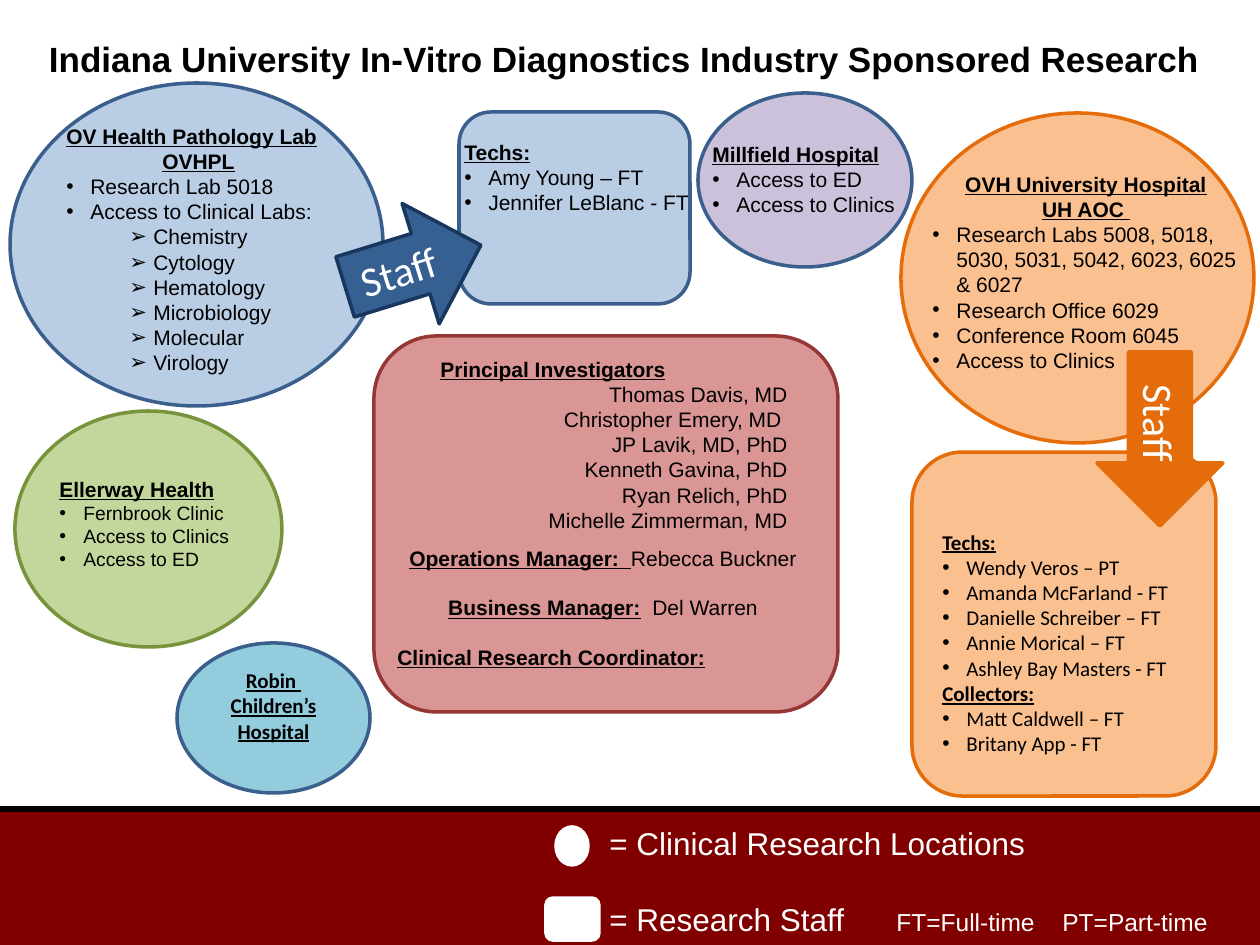
from lxml.etree import SubElement
from pptx import Presentation
from pptx.dml.color import RGBColor
from pptx.enum.shapes import MSO_CONNECTOR, MSO_SHAPE as SHAPE
from pptx.enum.text import MSO_ANCHOR as ANCHOR, PP_ALIGN as ALIGN
from pptx.oxml.ns import qn
from pptx.util import Emu, Pt

SCALE = 914400 / 126
COLORS = {
    "black": "000000", "white": "FFFFFF", "maroon": "800000",
    "blue": "B9CDE5", "blue line": "3A5F8C", "arrow": "376092", "arrow line": "17375E",
    "orange": "FAC090", "orange line": "E46C0A", "green": "C3D69B", "green line": "77933C",
    "red": "D99694", "red line": "953735", "purple": "CCC1DA", "teal": "93CDDD",
}
HEAD = dict(bold=True, underline=True)
CENTER_HEAD = dict(HEAD, align=ALIGN.CENTER)
ITEM = dict(bullet="•", left=24)
SUBITEM = dict(bullet="➢", left=87, level=1)


def px(n):
    return Emu(round(n * SCALE))


def rgb(name):
    return RGBColor.from_string(COLORS[name])


def place(box, dx, dy, w, h):
    """Box of size w by h, offset from the corner of another box."""
    return box[0] + dx, box[1] + dy, w, h


def write(tf, text, size=12, font="Arial", color="black", bold=False, underline=False,
          align=ALIGN.LEFT, bullet=None, left=0, level=0, before=0, plain="", tabs=()):
    """Append a paragraph; plain is a second run without bold and underline."""
    p = tf.paragraphs[0] if not tf.text else tf.add_paragraph()
    p.alignment, p.level = align, level
    if before:
        p.space_before = Pt(before)
    pPr = p._p.get_or_add_pPr()
    if left:
        pPr.set("marL", str(px(left)))
    if bullet:
        pPr.set("indent", str(-px(24)))
        SubElement(pPr, qn("a:buFont"), typeface="Arial")
        SubElement(pPr, qn("a:buChar"), char=bullet)
    if tabs:
        tab_list = SubElement(pPr, qn("a:tabLst"))
        for pos in tabs:
            SubElement(tab_list, qn("a:tab"), pos=str(px(pos)), algn="l")
    for part, strong, under in ((text, bold, underline), (plain, False, False)):
        if part:
            r = p.add_run()
            r.text = part
            r.font.size, r.font.name = Pt(size), font
            r.font.bold, r.font.underline = strong, under
            r.font.color.rgb = rgb(color)
    return p


def add_shape(s, kind, box, fill, line):
    sp = s.shapes.add_shape(kind, *map(px, box))
    sp.shadow.inherit = False
    sp.fill.solid()
    sp.fill.fore_color.rgb = rgb(fill)
    sp.line.color.rgb = rgb(line)
    sp.line.width = Pt(2)
    return sp


def add_text(s, box):
    tf = s.shapes.add_textbox(*map(px, box)).text_frame
    tf.word_wrap = True
    return tf


def add_card(s, kind, box, fill, line, text_at, paragraphs, font="Arial"):
    """Location (ellipse) or staff group (rounded box) with its list."""
    add_shape(s, kind, box, fill, line)
    tf = add_text(s, place(box, *text_at))
    for style, *lines in paragraphs:
        for text in lines:
            write(tf, text, font=font, **style)


def add_staff_arrow(s, box, fill, line, rotation=0):
    sp = add_shape(s, SHAPE.DOWN_ARROW, box, fill, line)
    sp.rotation = rotation
    tf = sp.text_frame
    tf.vertical_anchor = ANCHOR.MIDDLE
    tf._txBody.bodyPr.set("vert", "vert")
    write(tf, "Staff", size=24, font="Calibri", color="white", align=ALIGN.CENTER)


def add_title(s, box):
    sp = s.shapes.title
    sp.left, sp.top, sp.width, sp.height = map(px, box)
    tf = sp.text_frame
    tf.word_wrap = True
    tf.vertical_anchor = ANCHOR.MIDDLE
    write(tf, "Indiana University In-Vitro Diagnostics Industry Sponsored Research",
          size=20, bold=True, align=ALIGN.CENTER)


def add_childrens_hospital(s, box):
    tf = add_shape(s, SHAPE.OVAL, box, "teal", "blue line").text_frame
    tf.word_wrap = True
    tf.vertical_anchor = ANCHOR.MIDDLE
    tf.margin_bottom = px(31)
    for text in ("Robin ", "Children’s", "Hospital"):
        write(tf, text, font="Calibri", **CENTER_HEAD)


def add_leadership(s, box):
    add_card(s, SHAPE.ROUNDED_RECTANGLE, box, "red", "red line", (54, 14, 372, 267), [
        (HEAD, "Principal Investigators"),
        (dict(align=ALIGN.RIGHT), "Thomas Davis, MD", "Christopher Emery, MD ",
         "JP Lavik, MD, PhD", "Kenneth Gavina, PhD", "Ryan Relich, PhD",
         "Michelle Zimmerman, MD"),
    ])
    tf = add_text(s, place(box, 0, 203, box[2], 140))
    write(tf, "Operations Manager:  ", plain="Rebecca Buckner ", **CENTER_HEAD)
    write(tf, "Business Manager:", plain="  Del Warren ", before=14, **CENTER_HEAD)
    write(tf, "Clinical Research Coordinator:", left=11, before=14, **HEAD)


def add_legend(s, box):
    add_shape(s, SHAPE.RECTANGLE, box, "maroon", "maroon")
    x, y, w, _ = box
    rule = s.shapes.add_connector(MSO_CONNECTOR.STRAIGHT, px(x), px(y), px(x + w), px(y))
    rule.line.color.rgb = rgb("black")
    rule.line.width = Pt(3)
    SubElement(rule._element.spPr, qn("a:effectLst"))
    add_shape(s, SHAPE.OVAL, place(box, 556, 18, 32, 38), "white", "white")
    add_shape(s, SHAPE.ROUNDED_RECTANGLE, place(box, 546, 89, 53, 42), "white", "white")
    tf = add_text(s, place(box, 597, 9, 628, 127))
    write(tf, "= Clinical Research Locations", size=18, color="white")
    p = write(tf, "= Research Staff", size=18, color="white", before=22,
              plain="\tFT=Full-time\tPT=Part-time", tabs=(287, 453))
    p.runs[1].font.size = Pt(14)


def main():
    prs = Presentation()
    prs.slide_width, prs.slide_height = px(1260), px(945)
    s = prs.slides.add_slide(prs.slide_layouts[5])
    add_legend(s, (0, 809, 1260, 136))
    add_title(s, (21, 31, 1207, 55))
    add_leadership(s, (374, 336, 464, 376))
    add_card(s, SHAPE.ROUNDED_RECTANGLE, (459, 112, 231, 192), "blue", "blue line",
             (-7, 21, 252, 115),
             [(HEAD, "Techs:"), (ITEM, "Amy Young – FT", "Jennifer LeBlanc - FT")])
    add_card(s, SHAPE.ROUNDED_RECTANGLE, (912, 452, 304, 344), "orange", "orange line",
             (18, 71, 253, 267), [
                 (HEAD, "Techs:"),
                 (ITEM, "Wendy Veros – PT", "Amanda McFarland - FT",
                  "Danielle Schreiber – FT", "Annie Morical – FT",
                  "Ashley Bay Masters - FT"),
                 (HEAD, "Collectors:"),
                 (ITEM, "Matt Caldwell – FT", "Britany App - FT"),
             ], font="Calibri")
    add_card(s, SHAPE.OVAL, (15, 411, 267, 236), "green", "green line", (32, 59, 252, 108), [
        (HEAD, "Ellerway Health"),
        (dict(ITEM, size=11), "Fernbrook Clinic", "Access to Clinics", "Access to ED"),
    ])
    add_card(s, SHAPE.OVAL, (10, 83, 373, 323), "blue", "blue line", (44, 34, 289, 292), [
        (HEAD, "OV Health Pathology Lab"),
        (CENTER_HEAD, "OVHPL"),
        (ITEM, "Research Lab 5018", "Access to Clinical Labs:"),
        (SUBITEM, "Chemistry", "Cytology", "Hematology", "Microbiology", "Molecular",
         "Virology"),
    ])
    add_card(s, SHAPE.OVAL, (901, 113, 353, 330), "orange", "orange line",
             (19, 52, 332, 217), [
                 (CENTER_HEAD, "OVH University Hospital", "UH AOC "),
                 (ITEM, "Research Labs 5008, 5018, 5030, 5031, 5042, 6023, 6025 & 6027",
                  "Research Office 6029", "Conference Room 6045", "Access to Clinics"),
             ])
    add_card(s, SHAPE.OVAL, (698, 93, 214, 174), "purple", "blue line", (2, 42, 216, 89),
             [(HEAD, "Millfield Hospital"), (ITEM, "Access to ED", "Access to Clinics")])
    add_childrens_hospital(s, (177, 643, 193, 150))
    add_staff_arrow(s, (350, 195, 126, 142), "arrow", "arrow line", rotation=252.9)
    add_staff_arrow(s, (1097, 352, 126, 174), "orange line", "orange line")
    prs.save("out.pptx")


if __name__ == "__main__":
    main()
